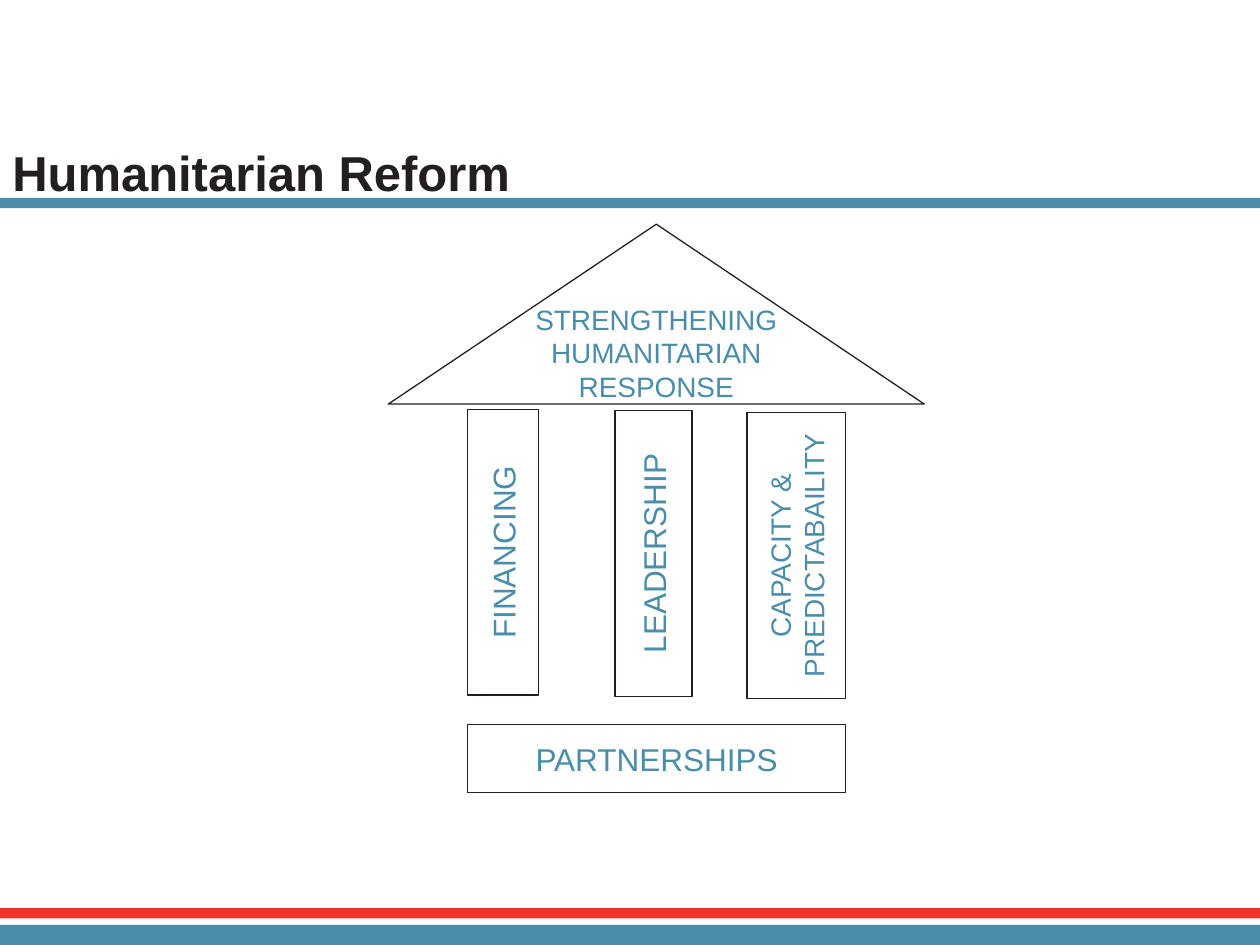
from dataclasses import dataclass

from pptx import Presentation
from pptx.dml.color import RGBColor
from pptx.enum import shapes, text
from pptx.util import Pt


@dataclass(frozen=True)
class Theme:
    font: str = "Arial"
    blue: RGBColor = RGBColor(0x4A, 0x8D, 0xAA)
    red: RGBColor = RGBColor(0xEE, 0x35, 0x28)
    ink: RGBColor = RGBColor(0x23, 0x1F, 0x20)
    title: int = 28
    label: int = 18
    small: int = 16
    outline: float = 0.75


THEME = Theme()
SHAPE = shapes.MSO_SHAPE
WIDTH, HEIGHT = 720, 540


def add_shape(page, kind, box, fill=None):
    """Place a filled shape without outline, or an outlined one without fill."""
    shape = page.shapes.add_shape(kind, *map(Pt, box))
    shape.shadow.inherit = False
    if fill is None:
        shape.fill.background()
        shape.line.color.rgb = THEME.ink
        shape.line.width = Pt(THEME.outline)
    else:
        shape.fill.solid()
        shape.fill.fore_color.rgb = fill
        shape.line.fill.background()
    return shape


def write(shape, words, size, color=THEME.blue, bold=False,
          align=text.PP_ALIGN.CENTER, anchor=text.MSO_ANCHOR.MIDDLE):
    frame = shape.text_frame
    frame.word_wrap = True
    frame.vertical_anchor = anchor
    para = frame.paragraphs[0]
    para.alignment = align
    span = para.add_run()
    span.text = words
    span.font.name = THEME.font
    span.font.size = Pt(size)
    span.font.bold = bold
    span.font.color.rgb = color


def add_bands(page):
    for top, height, color in ((113.1, 5.8, THEME.blue),
                               (528.5, 11.5, THEME.blue),
                               (519, 5.8, THEME.red)):
        add_shape(page, SHAPE.RECTANGLE, (0, top, WIDTH, height), color)


def add_title(page, box):
    title = page.shapes.add_textbox(*map(Pt, box))
    write(title, "Humanitarian Reform", THEME.title, THEME.ink, bold=True,
          align=text.PP_ALIGN.LEFT)


def add_roof(page, box):
    left, top, width, height = box
    add_shape(page, SHAPE.ISOSCELES_TRIANGLE, box)
    label_width = 186.5
    label = page.shapes.add_textbox(
        Pt(left + (width - label_width) / 2), Pt(top + 41),
        Pt(label_width), Pt(65.5))
    write(label, "STRENGTHENING HUMANITARIAN RESPONSE", THEME.small,
          anchor=text.MSO_ANCHOR.TOP)


def add_pillar(page, box, words, size):
    """Fill an upright box with a shape turned to read from bottom to top."""
    left, top, width, height = box
    turned = (left + (width - height) / 2, top + (height - width) / 2,
              height, width)
    pillar = add_shape(page, SHAPE.RECTANGLE, turned)
    pillar.rotation = 270
    write(pillar, words, size)


def add_base(page, box):
    write(add_shape(page, SHAPE.RECTANGLE, box), "PARTNERSHIPS", THEME.label)


def add_temple(page, box):
    left, top, width, height = box
    base_left, base_width, base_height = left + 45.2, 216.2, 39
    add_roof(page, (left, top, width, 102.8))
    pillars = (
        (0, 105.7, 40.6, "FINANCING", THEME.label),
        (84.3, 106.5, 44, "LEADERSHIP", THEME.label),
        (159.8, 107.7, 56.4, "CAPACITY & PREDICTABAILITY", THEME.small),
    )
    for shift, drop, thickness, words, size in pillars:
        add_pillar(page, (base_left + shift, top + drop, thickness, 163.4),
                   words, size)
    add_base(page, (base_left, top + height - base_height,
                    base_width, base_height))


def main():
    deck = Presentation()
    deck.slide_width, deck.slide_height = Pt(WIDTH), Pt(HEIGHT)
    page = deck.slides.add_slide(deck.slide_layouts[6])
    add_bands(page)
    add_temple(page, (221.9, 128.1, 306.3, 324.9))
    add_title(page, (0, 75.5, 487.4, 46))
    deck.save("out.pptx")


if __name__ == "__main__":
    main()
